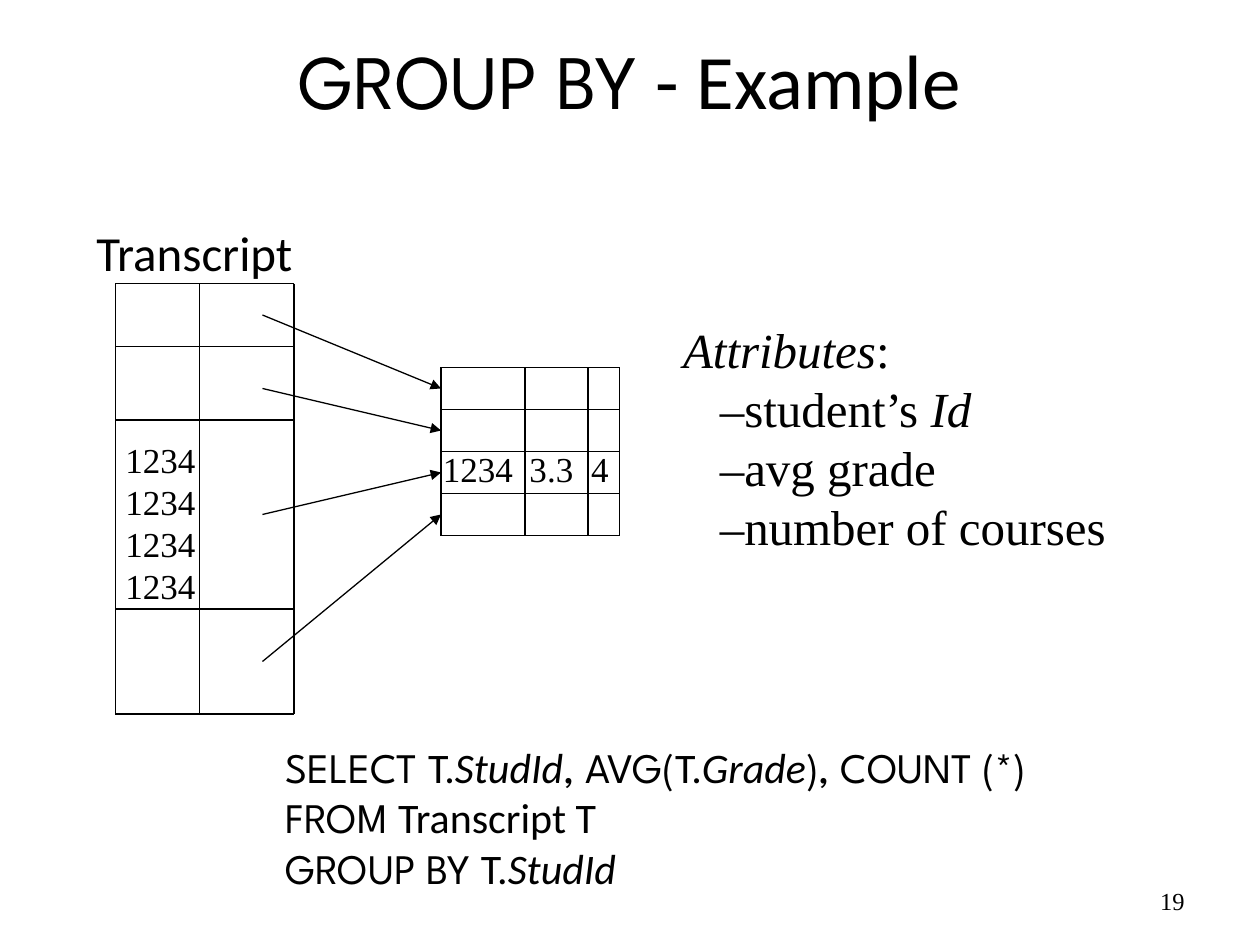
from typing import NamedTuple

from lxml.etree import SubElement
from pptx import Presentation
from pptx.dml.color import RGBColor
from pptx.enum.shapes import MSO_CONNECTOR as Conn
from pptx.enum.text import MSO_ANCHOR as Anchor, PP_ALIGN as Align
from pptx.oxml.ns import qn
from pptx.util import Pt

PX = 9525  # 96 px to the inch
INK = "000000"
LEAGUE, CALIBRI, TIMES = "League Spartan", "Calibri", "Times New Roman"


class Bit(NamedTuple):
    text: str
    font: str = TIMES
    slant: bool = False


class Note(NamedTuple):
    box: tuple[int, int, int, int]
    size: int
    lines: list[list[Bit]]
    align: Align = Align.LEFT
    anchor: Anchor = Anchor.TOP
    wrap: bool = False
    inset: int = 0  # left margin of every line after the first


class Grid(NamedTuple):
    cols: list[int]
    rows: list[int]


class Arrow(NamedTuple):
    start: int
    end: int


def color(code: str) -> RGBColor:
    return RGBColor.from_string(code)


def draw_line(slide, x1: int, y1: int, x2: int, y2: int, head: bool = False) -> None:
    ends = [v * PX for v in (x1, y1, x2, y2)]
    line = slide.shapes.add_connector(Conn.STRAIGHT, *ends)
    line.line.color.rgb = color(INK)
    line.line.width = Pt(0.75)
    if head:
        SubElement(line.line._get_or_add_ln(), qn("a:tailEnd"), type="triangle")
    SubElement(line._element.spPr, qn("a:effectLst"))


def draw_grid(slide, grid: Grid) -> None:
    for y in grid.rows:
        draw_line(slide, grid.cols[0], y, grid.cols[-1], y)
    for x in grid.cols:
        draw_line(slide, x, grid.rows[0], x, grid.rows[-1])


def draw_note(slide, note: Note) -> None:
    frame = slide.shapes.add_textbox(*(v * PX for v in note.box)).text_frame
    frame.word_wrap = note.wrap
    frame.vertical_anchor = note.anchor
    for i, bits in enumerate(note.lines):
        para = frame.add_paragraph() if i else frame.paragraphs[0]
        para.alignment = note.align
        if i and note.inset:
            para._p.get_or_add_pPr().set("marL", str(note.inset * PX))
        for bit in bits:
            run = para.add_run()
            run.text = bit.text
            font = run.font
            font.name, font.size, font.italic = bit.font, Pt(note.size), bit.slant
            font.color.rgb = color(INK)


# Source table, result table and the arrows between them
SOURCE = Grid([88, 152, 224], [216, 264, 320, 464, 544])
RESULT = Grid([336, 400, 448, 472], list(range(280, 409, 32)))
ARROWS = [Arrow(240, 296), Arrow(296, 328), Arrow(392, 360), Arrow(504, 392)]

# Heading, labels and query
STUD = Bit("StudId", CALIBRI, True)
NOTES = [
    Note((72, 0, 816, 120), 44,
         [[Bit("GROUP BY", LEAGUE), Bit(" - Example", CALIBRI)]],
         Align.CENTER, Anchor.MIDDLE, True),
    Note((688, 667, 224, 38), 14, [[Bit("19")]],
         Align.RIGHT, Anchor.MIDDLE, True),
    Note((64, 165, 173, 55), 28, [[Bit("Transcript", CALIBRI)]]),
    Note((511, 239, 342, 189), 28, [
        [Bit("Attributes", slant=True), Bit(":")],
        [Bit("–student’s "), Bit("Id", slant=True)],
        [Bit("–avg grade")],
        [Bit("–number of courses")],
    ], inset=28),
    Note((208, 560, 645, 125), 24, [
        [Bit("SELECT ", LEAGUE), Bit("T.", CALIBRI), STUD,
         Bit(", AVG(", LEAGUE), Bit("T.", CALIBRI),
         Bit("Grade", CALIBRI, True), Bit("), COUNT (*)", LEAGUE)],
        [Bit("FROM ", LEAGUE), Bit("Transcript T", CALIBRI)],
        [Bit("GROUP BY ", LEAGUE), Bit("T.", CALIBRI), STUD],
    ]),
    Note((86, 329, 73, 137), 20, [[Bit("1234")]] * 4),
]

# Values of the result row: text, left, width
CELLS = [("1234", 328, 73), ("3.3", 394, 53), ("4", 441, 33)]


def main() -> None:
    deck = Presentation()
    deck.slide_width, deck.slide_height = 960 * PX, 720 * PX
    slide = deck.slides.add_slide(deck.slide_layouts[6])

    for grid in (SOURCE, RESULT):
        draw_grid(slide, grid)
    for arrow in ARROWS:
        draw_line(slide, 200, arrow.start, RESULT.cols[0], arrow.end, head=True)
    for note in NOTES:
        draw_note(slide, note)
    for text, left, width in CELLS:
        draw_note(slide, Note((left, 336, width, 41), 20, [[Bit(text)]]))

    deck.save("out.pptx")


if __name__ == "__main__":
    main()
